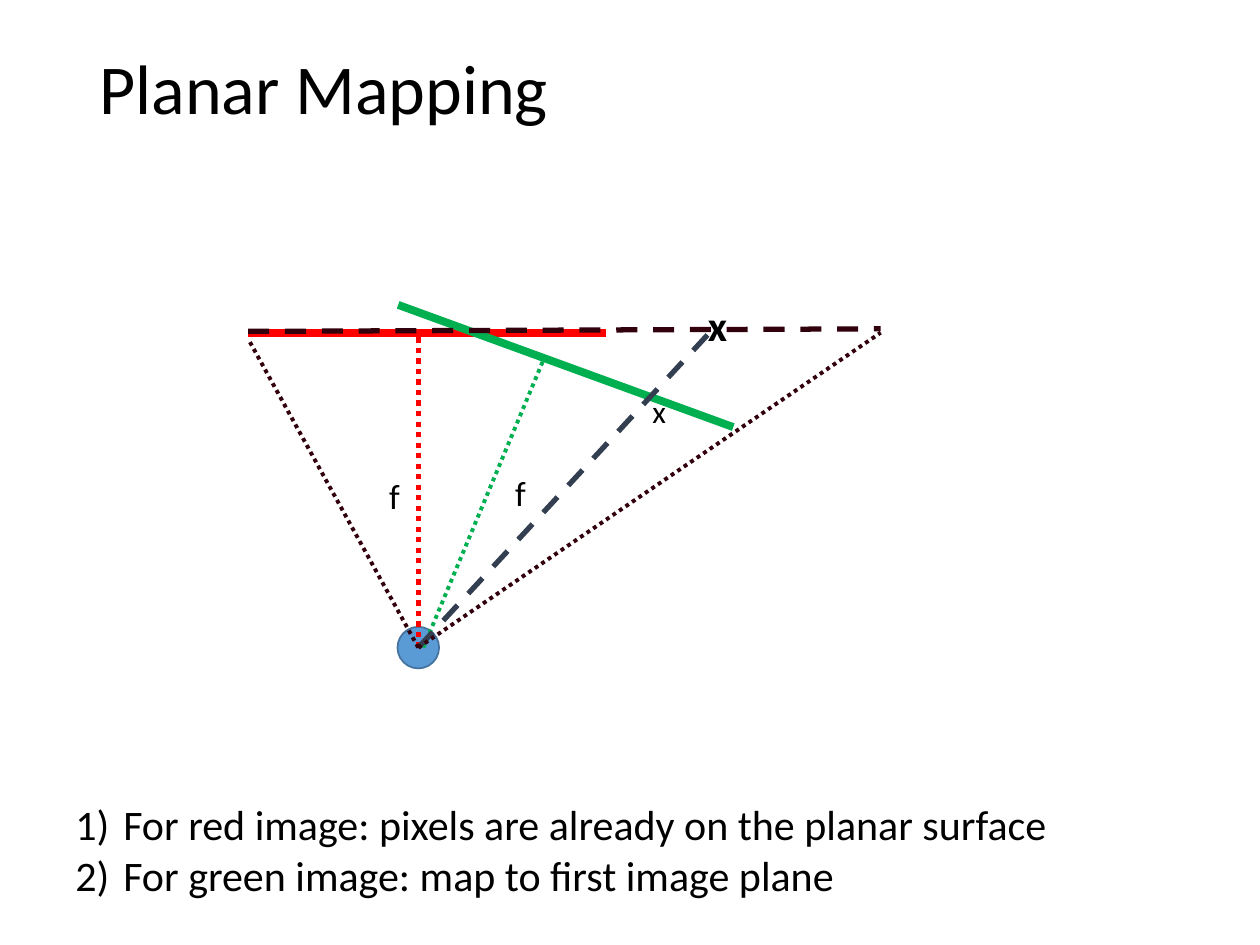
from pptx import Presentation
from pptx.dml.color import RGBColor
from pptx.enum.dml import MSO_LINE
from pptx.enum.shapes import MSO_CONNECTOR, MSO_SHAPE
from pptx.enum.text import MSO_ANCHOR, MSO_AUTO_SIZE
from pptx.oxml.ns import qn
from pptx.util import Inches, Pt
from lxml.etree import SubElement

RED, GREEN, SLATE, MAROON = "FF0000", "00B050", "333F50", "32000C"
DOT, DASH = MSO_LINE.ROUND_DOT, MSO_LINE.DASH
EYE = (3.32, 5.14)
STEPS = [
    "For red image: pixels are already on the planar surface",
    "For green image: map to first image plane",
]


def paint(form, color):
    """Set a solid colour on a fill, a font or a line."""
    target = form.color if hasattr(form, "color") else form.fore_color
    target.rgb = RGBColor.from_string(color)


def add_line(slide, start, end, color, width, dash=None):
    points = [Inches(v) for v in (*start, *end)]
    line = slide.shapes.add_connector(MSO_CONNECTOR.STRAIGHT, *points)
    paint(line.line, color)
    line.line.width = Pt(width)
    if dash:
        line.line.dash_style = dash
    SubElement(line._element.spPr, qn("a:effectLst"))


def add_eye(slide, size=0.33):
    left, top = (v - size / 2 for v in EYE)
    eye = slide.shapes.add_shape(
        MSO_SHAPE.OVAL, Inches(left), Inches(top), Inches(size), Inches(size))
    eye.shadow.inherit = False
    eye.fill.solid()
    paint(eye.fill, "5B9BD5")
    paint(eye.line, "43739E")
    eye.line.width = Pt(1)


def add_text(slide, box, lines, size, bold=False, numbered=False):
    shape = slide.shapes.add_textbox(*[Inches(v) for v in box])
    frame = shape.text_frame
    frame.word_wrap = False
    frame.auto_size = MSO_AUTO_SIZE.SHAPE_TO_FIT_TEXT
    frame.text = "\n".join(lines)
    for para in frame.paragraphs:
        if numbered:
            props = para._p.get_or_add_pPr()
            props.set("marL", str(Inches(0.38)))
            props.set("indent", str(Inches(-0.38)))
            SubElement(props, qn("a:buAutoNum"), type="arabicParenR")
        font = para.font
        font.name, font.size, font.bold = "Calibri", Pt(size), bold
        paint(font, "000000")
    return frame


def add_title(slide, text):
    frame = add_text(slide, (0.69, 0, 8.62, 1.45), [text], 40)
    frame.auto_size = MSO_AUTO_SIZE.NONE
    frame.word_wrap = True
    frame.vertical_anchor = MSO_ANCHOR.MIDDLE
    frame.paragraphs[0].line_spacing = 0.9


def main():
    deck = Presentation()
    deck.slide_width, deck.slide_height = Inches(10), Inches(7.5)
    slide = deck.slides.add_slide(deck.slide_layouts[6])

    add_title(slide, "Planar Mapping")

    # Image planes, the eye and the focal lengths
    add_line(slide, (1.97, 2.64), (4.81, 2.64), RED, 4.5)
    add_line(slide, (3.16, 2.42), (5.82, 3.39), GREEN, 4.5)
    add_eye(slide)
    add_line(slide, EYE, (3.32, 2.64), RED, 3, DOT)
    add_line(slide, (3.36, 5.14), (4.32, 2.84), GREEN, 2.25, DOT)
    add_text(slide, (2.99, 3.72, 0.28, 0.44), ["f"], 20)
    add_text(slide, (3.99, 3.69, 0.28, 0.44), ["f"], 20)

    # A pixel and where its ray meets the first plane
    add_line(slide, EYE, (5.66, 2.61), SLATE, 3, DASH)
    add_text(slide, (5.08, 3.06, 0.33, 0.4), ["x"], 18)
    add_text(slide, (5.52, 2.33, 0.39, 0.5), ["x"], 24, bold=True)

    add_text(slide, (0.5, 6.29, 7.98, 0.91), STEPS, 24, numbered=True)

    # The extended plane and its field of view
    add_line(slide, (1.97, 2.63), (6.99, 2.61), MAROON, 3, DASH)
    add_line(slide, EYE, (6.99, 2.64), MAROON, 2.25, DOT)
    add_line(slide, EYE, (1.97, 2.69), MAROON, 2.25, DOT)

    deck.save("out.pptx")


if __name__ == "__main__":
    main()
